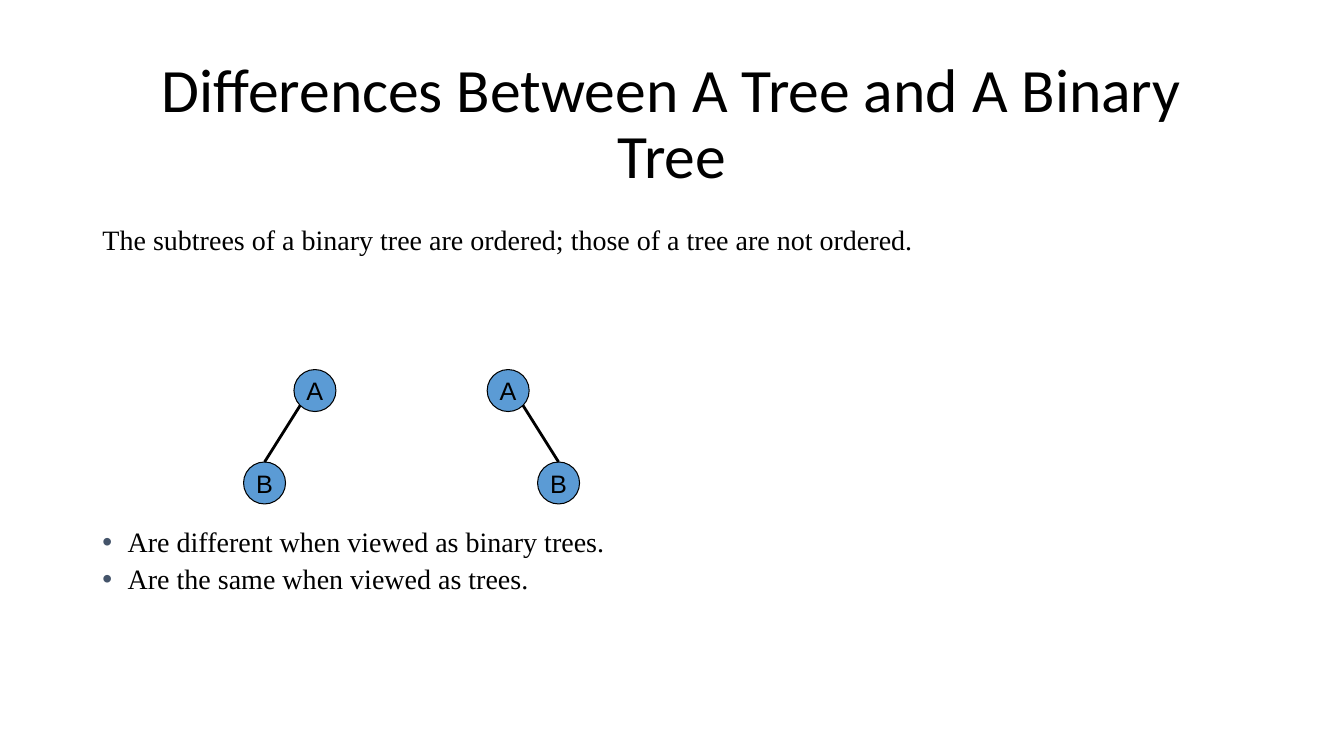
from lxml import etree
from pptx import Presentation
from pptx import util as u
from pptx.dml.color import RGBColor
from pptx.enum import shapes, text
from pptx.oxml import ns

PX = 9525
BLACK = RGBColor(0x00, 0x00, 0x00)
NODE_BLUE = RGBColor(0x5B, 0x9B, 0xD5)
BULLET_SLATE = RGBColor(0x44, 0x54, 0x6A)
NODE_SIZE = 40
ROOT_TOP, CHILD_TOP = 352, 440
BULLETS = ["Are different when viewed as binary trees.", "Are the same when viewed as trees."]


def px(*lengths):
    return [u.Emu(length * PX) for length in lengths]


def place(shape, *box):
    shape.left, shape.top, shape.width, shape.height = px(*box)


def write(paragraph, content, font="Times New Roman", size=20, align=None, spacing=None, before=None):
    run = paragraph.add_run()
    run.text = content
    run.font.name = font
    run.font.size = u.Pt(size)
    run.font.color.rgb = BLACK
    paragraph.alignment = align
    paragraph.line_spacing = spacing
    if before is not None:
        paragraph.space_before = u.Pt(before)


def set_bullet(paragraph, character=None, indent=0):
    properties = paragraph._p.get_or_add_pPr()
    properties.set("marL", str(indent * PX))
    properties.set("indent", str(-indent * PX))
    if character is None:
        etree.SubElement(properties, ns.qn("a:buNone"))
        return
    color = etree.SubElement(properties, ns.qn("a:buClr"))
    etree.SubElement(color, ns.qn("a:srgbClr"), val=str(BULLET_SLATE))
    etree.SubElement(properties, ns.qn("a:buFont"), typeface="Arial")
    etree.SubElement(properties, ns.qn("a:buChar"), char=character)


def fill_title(title):
    place(title, 88, 38, 1104, 163)
    frame = title.text_frame
    frame.vertical_anchor = text.MSO_ANCHOR.MIDDLE
    frame.auto_size = text.MSO_AUTO_SIZE.NONE
    write(frame.paragraphs[0], "Differences Between A Tree and A Binary Tree",
          font="Calibri", size=44, align=text.PP_ALIGN.CENTER, spacing=0.9)


def fill_body(body):
    place(body, 88, 211, 1104, 457)
    frame = body.text_frame
    frame.auto_size = text.MSO_AUTO_SIZE.NONE
    intro = frame.paragraphs[0]
    write(intro, "The subtrees of a binary tree are ordered; those of a tree are not ordered.",
          spacing=0.9, before=10)
    set_bullet(intro)
    for content, before in zip(BULLETS, (194, 5)):
        paragraph = frame.add_paragraph()
        write(paragraph, content, spacing=0.9, before=before)
        set_bullet(paragraph, "•", indent=24)


def add_node(group, label, left, top):
    node = group.shapes.add_shape(shapes.MSO_SHAPE.OVAL, *px(left, top, NODE_SIZE, NODE_SIZE))
    node.shadow.inherit = False
    node.fill.solid()
    node.fill.fore_color.rgb = NODE_BLUE
    node.line.color.rgb = BLACK
    node.line.width = u.Pt(0.75)
    frame = node.text_frame
    frame.word_wrap = False
    frame.vertical_anchor = text.MSO_ANCHOR.MIDDLE
    write(frame.paragraphs[0], label, font="Arial", size=18, align=text.PP_ALIGN.CENTER)
    return node


def add_edge(group, start_x, start_y, child):
    start = px(start_x, start_y)
    edge = group.shapes.add_connector(
        shapes.MSO_CONNECTOR.STRAIGHT, *start, child.left + child.width // 2, child.top)
    edge.end_connect(child, 0)
    edge.line.color.rgb = BLACK
    edge.line.width = u.Pt(2)
    etree.SubElement(edge._element.spPr, ns.qn("a:effectLst"))


def add_tree(slide, root_left, child_left):
    group = slide.shapes.add_group_shape()
    add_node(group, "A", root_left, ROOT_TOP)
    child = add_node(group, "B", child_left, CHILD_TOP)
    corner = 6 if child_left < root_left else NODE_SIZE - 6
    add_edge(group, root_left + corner, ROOT_TOP + NODE_SIZE - 6, child)


def main():
    presentation = Presentation()
    presentation.slide_width, presentation.slide_height = px(1280, 720)
    slide = presentation.slides.add_slide(presentation.slide_layouts[1])
    fill_title(slide.shapes.title)
    fill_body(slide.placeholders[1])
    add_tree(slide, root_left=280, child_left=232)
    add_tree(slide, root_left=464, child_left=512)
    presentation.save("out.pptx")


if __name__ == "__main__":
    main()
